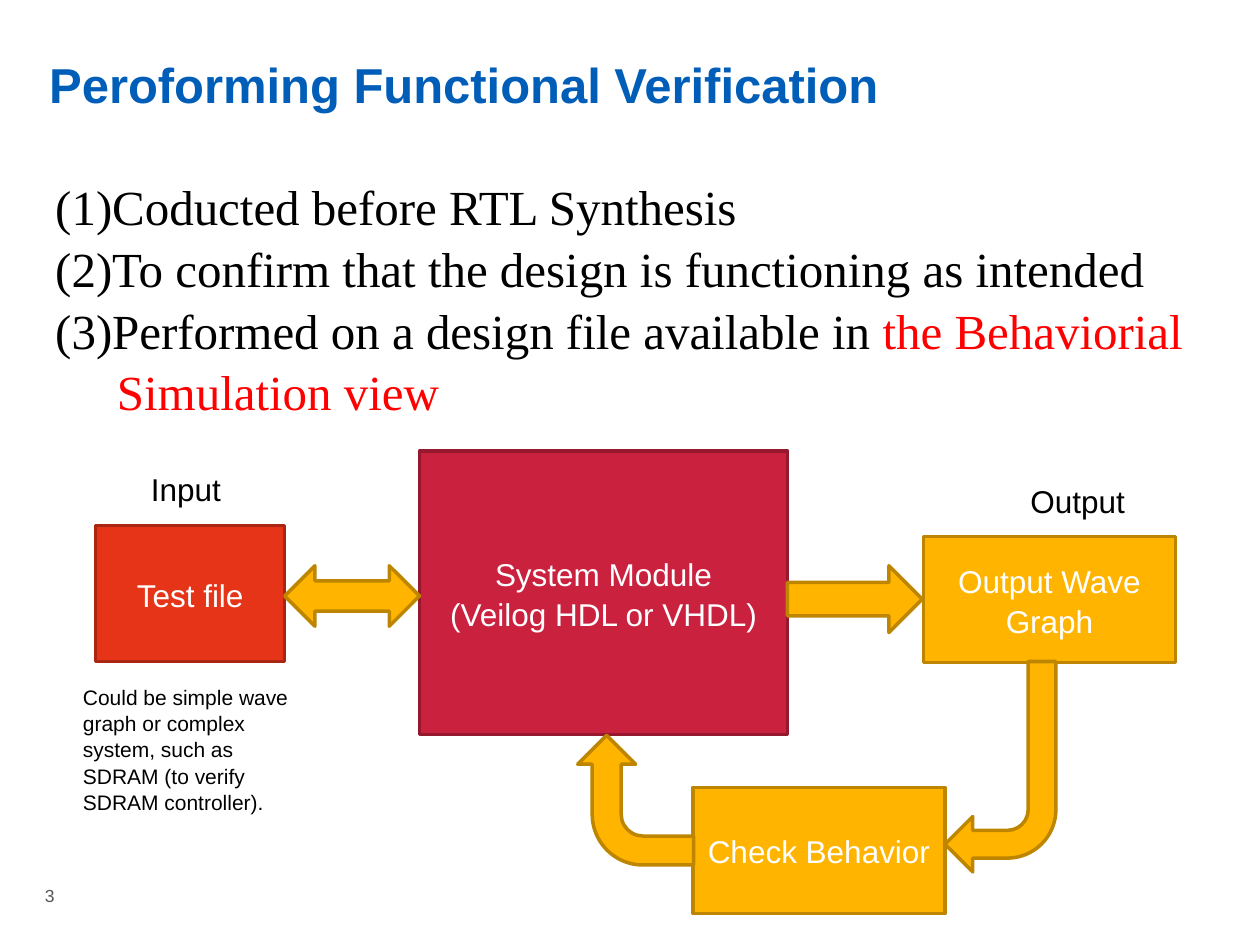
from dataclasses import dataclass

from lxml import etree
from pptx import Presentation
from pptx import util as u
from pptx.dml.color import RGBColor
from pptx.enum import shapes, text
from pptx.oxml import ns


@dataclass(frozen=True)
class Theme:
    sans: str = "Arial"
    serif: str = "Times New Roman"
    blue: str = "005EB8"
    gray: str = "58585A"
    black: str = "000000"
    white: str = "FFFFFF"
    red: str = "FF0000"
    crimson: tuple = ("CA213F", "95182F")
    orange: tuple = ("E53418", "A92612")
    amber: tuple = ("FFB400", "BD8500")
    heading: int = 28
    label: int = 18
    note: int = 12
    number: int = 10
    outline: int = 2
    spacing: float = 1.05


theme = Theme()


def style(para, size, color, name=theme.sans, bold=False):
    para.line_spacing = theme.spacing
    para.font.name = name
    para.font.size = u.Pt(size)
    para.font.bold = bold
    para.font.color.rgb = RGBColor.from_string(color)


def add_shape(page, kind, place, colors, lines=(), rotation=0):
    shape = page.shapes.add_shape(kind, *map(u.Inches, place))
    shape.rotation = rotation
    shape.shadow.inherit = False
    shape.fill.solid()
    shape.fill.fore_color.rgb = RGBColor.from_string(colors[0])
    shape.line.color.rgb = RGBColor.from_string(colors[1])
    shape.line.width = u.Pt(theme.outline)
    if lines:
        frame = shape.text_frame
        frame.word_wrap = True
        frame.vertical_anchor = text.MSO_ANCHOR.MIDDLE
        frame.text = "\n".join(lines)
        for para in frame.paragraphs:
            para.alignment = text.PP_ALIGN.CENTER
            style(para, theme.label, theme.white)


deck = Presentation()
deck.slide_width, deck.slide_height = u.Inches(10), u.Inches(7.5)
page = deck.slides.add_slide(deck.slide_layouts[5])

title = page.shapes.title
title.left, title.top = u.Inches(0.39), u.Inches(0.39)
title.width, title.height = u.Inches(9.21), u.Inches(0.98)
frame = title.text_frame
frame.text = "Peroforming Functional Verification"
frame.auto_size = text.MSO_AUTO_SIZE.NONE
frame.vertical_anchor = text.MSO_ANCHOR.TOP
frame.margin_left = frame.margin_right = frame.margin_bottom = 0
frame.margin_top = u.Inches(0.02)
para = frame.paragraphs[0]
para.alignment = text.PP_ALIGN.LEFT
style(para, theme.heading, theme.blue, bold=True)

box = page.shapes.add_textbox(*map(u.Inches, (0, 6.71, 0.79, 0.79)))
box.text_frame.word_wrap = True
box.text_frame.vertical_anchor = text.MSO_ANCHOR.MIDDLE
para = box.text_frame.paragraphs[0]
para.text = "3"
para.alignment = text.PP_ALIGN.CENTER
style(para, theme.number, theme.gray)

blocks = [
    ((3.33, 3.58, 2.92, 2.25), theme.crimson, ["System Module", "(Veilog HDL or VHDL)"]),
    ((0.76, 4.17, 1.5, 1.08), theme.orange, ["Test file"]),
    ((7.33, 4.26, 2, 1), theme.amber, ["Output Wave Graph"]),
    ((5.5, 6.25, 2, 1), theme.amber, ["Check Behavior"]),
]
for place, colors, lines in blocks:
    add_shape(page, shapes.MSO_SHAPE.RECTANGLE, place, colors, lines)

arrows = [
    (shapes.MSO_SHAPE.RIGHT_ARROW, (6.25, 4.49, 1.07, 0.53), 0),
    (shapes.MSO_SHAPE.BENT_ARROW, (7.5, 5.25, 0.88, 1.67), 180),
    (shapes.MSO_SHAPE.BENT_ARROW, (4.53, 5.89, 1.03, 0.92), 270),
    (shapes.MSO_SHAPE.LEFT_RIGHT_ARROW, (2.26, 4.49, 1.07, 0.48), 0),
]
for kind, place, rotation in arrows:
    add_shape(page, kind, place, theme.amber, rotation=rotation)

points = [
    (True, [("Coducted before RTL Synthesis", theme.black)]),
    (True, [("To confirm that the design is functioning as intended", theme.black)]),
    (True, [("Performed on a design file available in ", theme.black),
            ("the Behaviorial", theme.red)]),
    (False, [("Simulation view", theme.red)]),
]
box = page.shapes.add_textbox(*map(u.Inches, (0.34, 1.33, 9.24, 1.99)))
frame = box.text_frame
frame.word_wrap = False
for index, (numbered, parts) in enumerate(points):
    para = frame.add_paragraph() if index else frame.paragraphs[0]
    properties = para._p.get_or_add_pPr()
    if numbered:
        properties.set("marL", str(u.Inches(0.38)))
        properties.set("indent", str(-u.Inches(0.38)))
        etree.SubElement(properties, ns.qn("a:buFont"), typeface=theme.serif)
        etree.SubElement(properties, ns.qn("a:buAutoNum"), type="arabicParenBoth")
    else:
        properties.set("marL", str(u.Inches(0.49)))
    style(para, theme.heading, theme.black, theme.serif)
    for words, color in parts:
        span = para.add_run()
        span.text = words
        span.font.color.rgb = RGBColor.from_string(color)

labels = [
    ("Input", (1.1, 3.67, 0.76, 0.4), theme.label, False),
    ("Output", (8.08, 3.76, 0.96, 0.4), theme.label, False),
    ("Could be simple wave graph or complex system, such as SDRAM "
     "(to verify SDRAM controller).", (0.56, 5.37, 1.92, 1.11), theme.note, True),
]
for words, place, size, wrap in labels:
    box = page.shapes.add_textbox(*map(u.Inches, place))
    box.text_frame.word_wrap = wrap
    para = box.text_frame.paragraphs[0]
    para.text = words
    style(para, size, theme.black)

deck.save("out.pptx")
